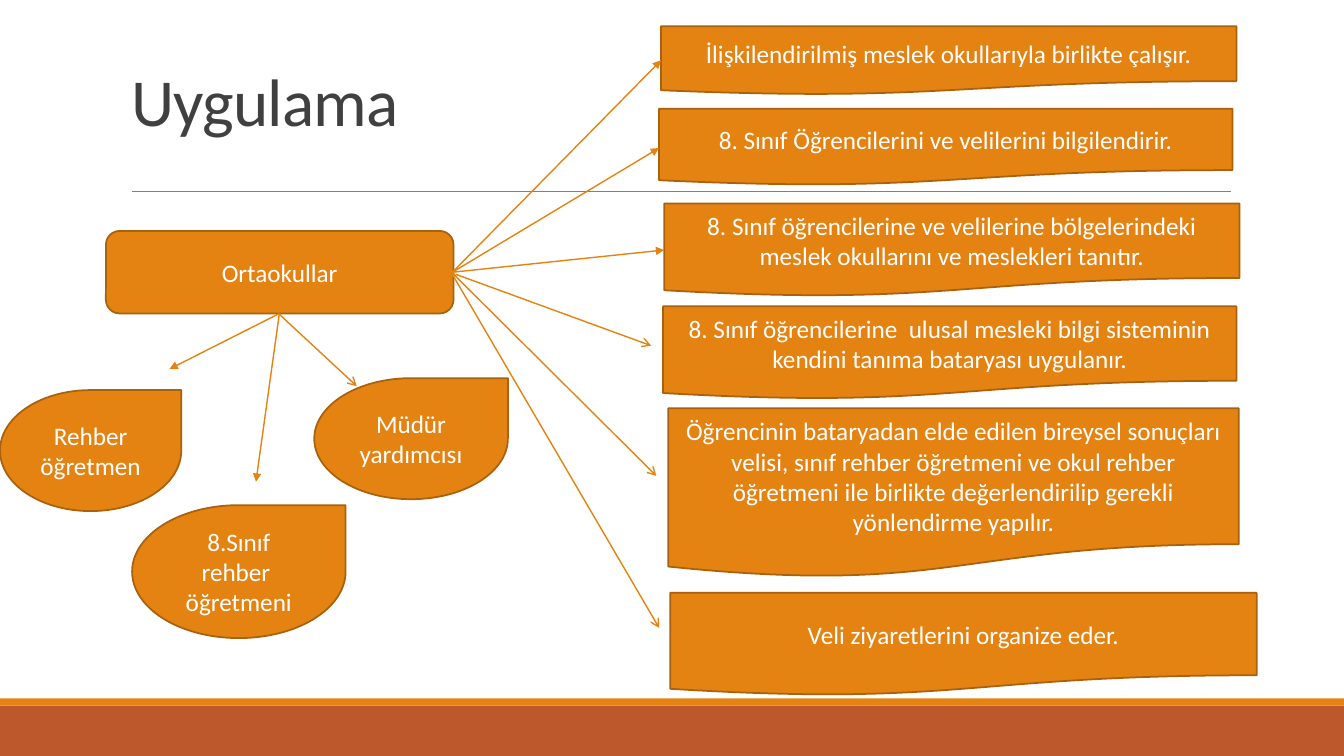
import pptx
import pptx.dml.color
import pptx.enum.shapes
import pptx.enum.text
import pptx.oxml
import pptx.oxml.ns
import pptx.util

Cm = pptx.util.Cm
Pt = pptx.util.Pt
SHAPES = pptx.enum.shapes.MSO_SHAPE
ALIGN = pptx.enum.text.PP_ALIGN
ANCHOR = pptx.enum.text.MSO_ANCHOR

COLORS = {
    "orange": "E48312",
    "outline": "A9610D",
    "rust": "BD582C",
    "rule": "808080",
    "title": "404040",
    "white": "FFFFFF",
}
SLIDE_WIDTH, SLIDE_HEIGHT = 33.87, 19.05

# Text, box (left, top, width, height), arrow start, arrow end, arrowhead
TASKS = [
    ("İlişkilendirilmiş meslek okullarıyla birlikte çalışır.",
     (16.66, 0.66, 14.5, 1.73), (11.4, 6.86), (16.66, 1.52), "triangle"),
    ("8. Sınıf Öğrencilerini ve velilerini bilgilendirir.",
     (16.61, 2.74, 14.45, 1.93), (11.4, 6.86), (16.61, 3.73), "triangle"),
    ("8. Sınıf öğrencilerine ve velilerine bölgelerindeki meslek okullarını "
     "ve meslekleri tanıtır.",
     (16.74, 5.13, 14.5, 2.34), (11.4, 6.86), (16.74, 6.3), "triangle"),
    ("8. Sınıf öğrencilerine  ulusal mesleki bilgi sisteminin kendini tanıma "
     "bataryası uygulanır.",
     (16.71, 7.72, 14.45, 2.34), (11.48, 6.91), (16.41, 8.71), "arrow"),
    ("Öğrencinin bataryadan elde edilen bireysel sonuçları velisi, sınıf rehber "
     "öğretmeni ve okul rehber öğretmeni ile birlikte değerlendirilip gerekli "
     "yönlendirme yapılır.",
     (16.84, 10.29, 14.38, 4.27), (11.4, 6.88), (16.54, 11.99), "arrow"),
    ("Veli ziyaretlerini organize eder.",
     (16.89, 14.94, 14.78, 2.59), (11.38, 6.88), (16.61, 15.82), "arrow"),
]
STAFF = [
    ("Rehber öğretmen",
     (0, 9.83, 4.57, 3.05), (7.04, 7.9), (4.27, 9.3), "triangle"),
    ("8.Sınıf rehber  öğretmeni",
     (3.33, 12.73, 5.38, 3.35), (7.04, 7.9), (6.45, 12.14), "triangle"),
    ("Müdür yardımcısı",
     (7.92, 9.53, 4.88, 3.05), (7.04, 7.92), (8.99, 9.73), "arrow"),
]


def rgb(name):
    return pptx.dml.color.RGBColor.from_string(COLORS[name])


def write_text(text_frame, text, size=18, color="white", align=ALIGN.CENTER,
               anchor=ANCHOR.MIDDLE, line_spacing=None, tracking=None):
    """Fill a text frame with one formatted paragraph; tracking is in points."""
    text_frame.word_wrap = True
    text_frame.auto_size = pptx.enum.text.MSO_AUTO_SIZE.NONE
    text_frame.vertical_anchor = anchor
    paragraph = text_frame.paragraphs[0]
    paragraph.alignment = align
    paragraph.line_spacing = line_spacing
    run = paragraph.add_run()
    run.text = text
    run.font.name = "Calibri"
    run.font.size = Pt(size)
    run.font.bold = False
    run.font.color.rgb = rgb(color)
    if tracking is not None:
        run.font._element.set("spc", str(int(tracking * 100)))


class SlideBuilder:
    """Holds the current slide and its style; lengths are in centimetres."""

    def __init__(self, slide, fill="orange", outline="outline"):
        self.slide = slide
        self.fill = fill
        self.outline = outline

    def title(self, text, box):
        title = self.slide.shapes.title
        title.left, title.top, title.width, title.height = map(Cm, box)
        write_text(title.text_frame, text, size=48, color="title", align=ALIGN.LEFT,
                   anchor=ANCHOR.BOTTOM, line_spacing=0.85, tracking=-0.5)

    def filled_shape(self, kind, box, color):
        shape = self.slide.shapes.add_shape(kind, *map(Cm, box))
        shape.shadow.inherit = False
        shape.fill.solid()
        shape.fill.fore_color.rgb = rgb(color)
        shape.line.fill.background()
        return shape

    def band(self, top, height, color):
        self.filled_shape(SHAPES.RECTANGLE, (0, top, SLIDE_WIDTH, height), color)

    def labelled_shape(self, kind, text, box):
        shape = self.filled_shape(kind, box, self.fill)
        shape.line.color.rgb = rgb(self.outline)
        shape.line.width = Pt(1.25)
        write_text(shape.text_frame, text)

    def line(self, start, end, color, width, head=None):
        connector = self.slide.shapes.add_connector(
            pptx.enum.shapes.MSO_CONNECTOR.STRAIGHT, *map(Cm, start + end))
        connector.line.color.rgb = rgb(color)
        connector.line.width = Pt(width)
        if head:
            tail_end = pptx.oxml.parse_xml(
                f'<a:tailEnd {pptx.oxml.ns.nsdecls("a")} type="{head}"/>')
            connector.line._get_or_add_ln().append(tail_end)
        connector._element.spPr.append(
            pptx.oxml.parse_xml(f'<a:effectLst {pptx.oxml.ns.nsdecls("a")}/>'))

    def branches(self, kind, items):
        """Draw every labelled shape of a group with the arrow that leads to it."""
        for text, box, start, end, head in items:
            self.labelled_shape(kind, text, box)
            self.line(start, end, self.fill, 1, head)


def main():
    presentation = pptx.Presentation()
    presentation.slide_width = Cm(SLIDE_WIDTH)
    presentation.slide_height = Cm(SLIDE_HEIGHT)
    title_only = presentation.slide_layouts[5]
    builder = SlideBuilder(presentation.slides.add_slide(title_only))

    builder.band(17.78, 1.27, "rust")
    builder.band(17.6, 0.18, "orange")
    builder.line((3.33, 4.83), (31.01, 4.83), "rule", 0.5)
    builder.title("Uygulama", (3.05, 0.79, 27.94, 2.87))
    builder.labelled_shape(SHAPES.ROUNDED_RECTANGLE, "Ortaokullar",
                           (2.67, 5.82, 8.76, 2.08))
    builder.branches(SHAPES.FLOWCHART_DOCUMENT, TASKS)
    builder.branches(SHAPES.TEAR, STAFF)

    presentation.save("out.pptx")


if __name__ == "__main__":
    main()
